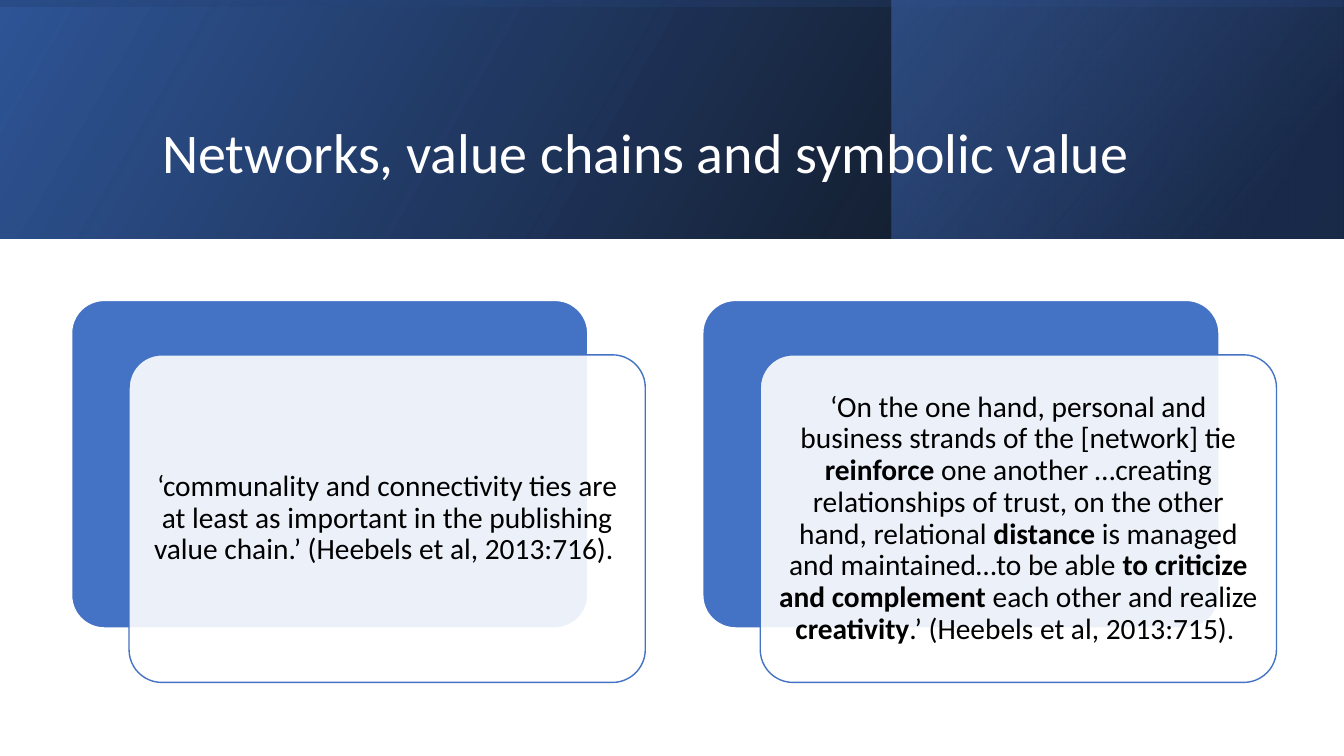
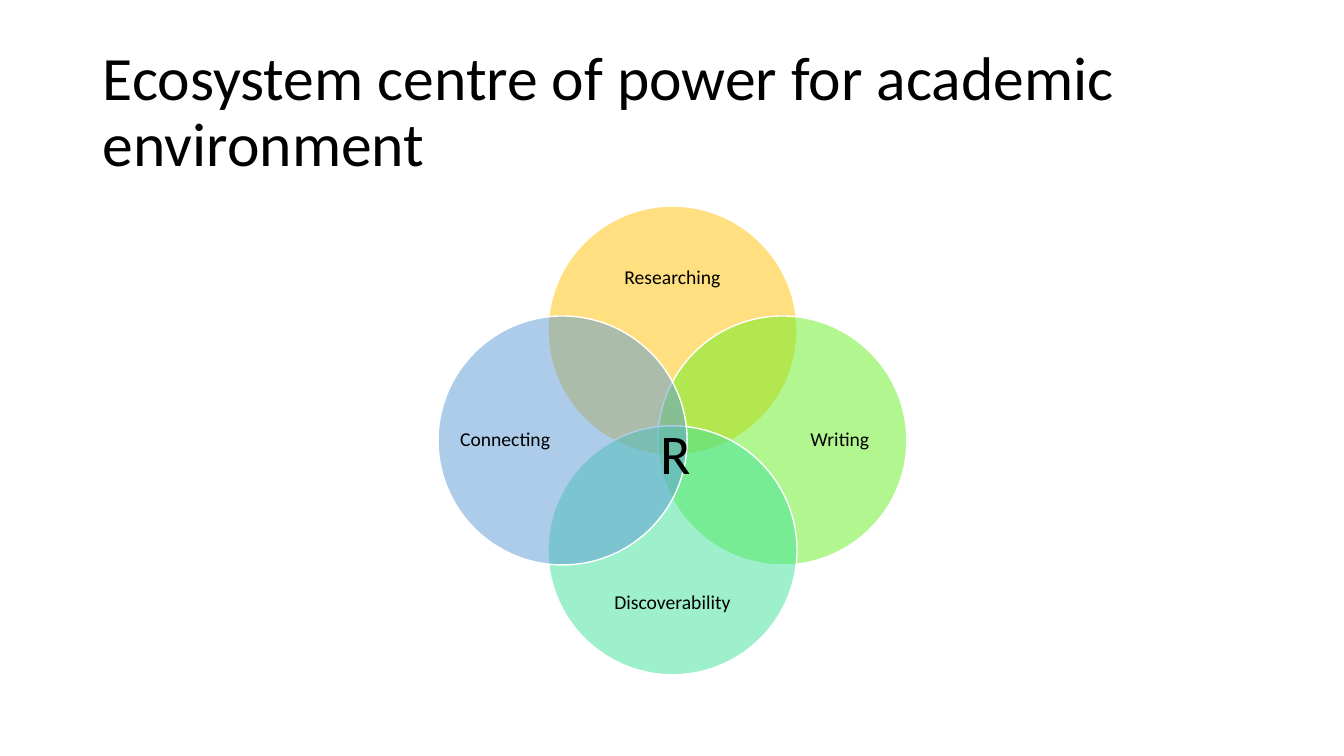
from lxml import etree
from pptx import Presentation
from pptx.dml.color import RGBColor
from pptx.enum.shapes import MSO_SHAPE
from pptx.enum.text import MSO_ANCHOR, PP_ALIGN
from pptx.oxml.ns import qn
from pptx.util import Inches, Pt

RECTANGLE, ROUNDED, OVAL = MSO_SHAPE.RECTANGLE, MSO_SHAPE.ROUNDED_RECTANGLE, MSO_SHAPE.OVAL
LEFT, CENTER, MIDDLE, TOP = PP_ALIGN.LEFT, PP_ALIGN.CENTER, MSO_ANCHOR.MIDDLE, MSO_ANCHOR.TOP

FONT = "Calibri"
BLACK = RGBColor(0x00, 0x00, 0x00)
WHITE = RGBColor(0xFF, 0xFF, 0xFF)
BLUE = RGBColor(0x44, 0x72, 0xC4)
DEEP_BLUE = RGBColor(0x2F, 0x55, 0x97)
NAVY = RGBColor(0x20, 0x38, 0x64)
GOLD = RGBColor(0xFF, 0xC0, 0x00)
LIME = RGBColor(0x67, 0xEF, 0x21)
MINT = RGBColor(0x3F, 0xE1, 0x9B)
SKY = RGBColor(0x5B, 0x9B, 0xD5)

SLIDE_WIDTH, SLIDE_HEIGHT = 13.33, 7.5
BAND_HEIGHT = 2.37

# box, rotation, gradient angle, stops (position %, colour, opacity %)
BANDS = [
    ((0, 0, SLIDE_WIDTH, BAND_HEIGHT), 0, 330, [(0, BLACK, 96), (100, DEEP_BLUE, 100)]),
    ((8.84, 0, 4.48, BAND_HEIGHT), 0, 320, [(19, NAVY, 68), (100, BLUE, 48)]),
    ((5.48, -5.48, BAND_HEIGHT, SLIDE_WIDTH), 270, 350, [(23, DEEP_BLUE, 16), (99, BLACK, 45)]),
]

# runs of each quotation: text, bold
QUOTES = [
    [("‘communality and connectivity ties are at least as important in the "
      "publishing value chain.’ (Heebels et al, 2013:716). ", False)],
    [("‘On the one hand, personal and business strands of the [network] tie ", False),
     ("reinforce ", True),
     ("one another …creating relationships of trust, on the other hand, relational ", False),
     ("distance", True),
     (" is managed and maintained…to be able ", False),
     ("to criticize and complement ", True),
     ("each other and realize ", False),
     ("creativity", True),
     (".’ (Heebels et al, 2013:715). ", False)],
]
CARD_LEFT, CARD_TOP, CARD_PITCH = 0.71, 2.98, 6.26
CARD_WIDTH, CARD_HEIGHT = 5.12, 3.25
CARD_SHIFT_X, CARD_SHIFT_Y = 0.57, 0.54

# label, colour, direction from the centre
CIRCLES = [
    ("Researching", GOLD, 0, -1),
    ("Writing", LIME, 1, 0),
    ("Discoverability", MINT, 0, 1),
    ("Connecting", SKY, -1, 0),
]
VENN_X, VENN_Y = 6.67, 4.37
DIAMETER, CIRCLE_REACH = 2.47, 1.09
LABEL_REACH_X, LABEL_REACH_Y = 1.66, 1.61


def set_attributes(target, values):
    for name, value in values.items():
        setattr(target, name, value)


def set_box(shape, box):
    values = map(Inches, box)
    set_attributes(shape, dict(zip(("left", "top", "width", "height"), values)))


def add_opacity(color_element, opacity):
    if opacity < 100:
        etree.SubElement(color_element, qn("a:alpha")).set("val", str(opacity * 1000))


def write_text(shape, runs, size, color=BLACK, align=CENTER, anchor=MIDDLE,
               margins=(0, 0, 0, 0), line_spacing=0.9):
    """Fill the shape with one paragraph; margins are left, top, right, bottom."""
    frame = shape.text_frame
    names = ("margin_left", "margin_top", "margin_right", "margin_bottom")
    set_attributes(frame, dict(zip(names, map(Inches, margins))))
    set_attributes(frame, {"word_wrap": True, "vertical_anchor": anchor})
    paragraph = frame.paragraphs[0]
    set_attributes(paragraph, {"alignment": align, "line_spacing": line_spacing})
    for text, bold in runs:
        run = paragraph.add_run()
        run.text = text
        set_attributes(run.font, {"name": FONT, "size": Pt(size), "bold": bold})
        run.font.color.rgb = color


def add_label(slide, text, box, size, **text_format):
    label = slide.shapes.add_textbox(*map(Inches, box))
    write_text(label, [(text, False)], size, **text_format)


def add_solid(slide, kind, box, fill, line, opacity=100):
    shape = slide.shapes.add_shape(kind, *map(Inches, box))
    shape.shadow.inherit = False
    shape.fill.solid()
    shape.fill.fore_color.rgb = fill
    add_opacity(shape.element.spPr.find(f".//{qn('a:srgbClr')}"), opacity)
    shape.line.color.rgb = line
    shape.line.width = Pt(1)
    return shape


def add_band(slide, box, rotation, angle, stops):
    """Add a mirrored rectangle with a linear gradient, angle clockwise."""
    band = slide.shapes.add_shape(RECTANGLE, *map(Inches, box))
    band.shadow.inherit = False
    band.rotation = rotation
    band.line.fill.background()
    properties = band.element.spPr
    properties.find(qn("a:xfrm")).set("flipH", "1")
    gradient = etree.Element(qn("a:gradFill"), rotWithShape="1")
    stop_list = etree.SubElement(gradient, qn("a:gsLst"))
    for position, color, opacity in stops:
        stop = etree.SubElement(stop_list, qn("a:gs"), pos=str(position * 1000))
        add_opacity(etree.SubElement(stop, qn("a:srgbClr"), val=str(color)), opacity)
    etree.SubElement(gradient, qn("a:lin"), ang=str(angle * 60000), scaled="0")
    properties.find(qn("a:prstGeom")).addnext(gradient)


def add_title(slide, text, box, size, color=BLACK, margin_top=0.05):
    title = slide.shapes.title
    set_box(title, box)
    write_text(title, [(text, False)], size, color, LEFT,
               margins=(0.1, margin_top, 0.1, 0.05))
    title.element.getparent().append(title.element)


def add_quote_card(slide, left, runs):
    size = (CARD_WIDTH, CARD_HEIGHT)
    back = add_solid(slide, ROUNDED, (left, CARD_TOP, *size), BLUE, WHITE)
    front_box = (left + CARD_SHIFT_X, CARD_TOP + CARD_SHIFT_Y, *size)
    front = add_solid(slide, ROUNDED, front_box, WHITE, BLUE, opacity=90)
    for card in (back, front):
        card.adjustments[0] = 0.1
    write_text(front, runs, 21, margins=(0.09,) * 4)


def centred_box(x, y, width, height):
    return x - width / 2, y - height / 2, width, height


def add_venn_circle(slide, text, color, step_x, step_y):
    circle_box = centred_box(VENN_X + step_x * CIRCLE_REACH,
                             VENN_Y + step_y * CIRCLE_REACH, DIAMETER, DIAMETER)
    add_solid(slide, OVAL, circle_box, color, WHITE, opacity=50)
    label_size = (0.95, 1.9) if step_x else (1.9, 0.79)
    label_box = centred_box(VENN_X + step_x * LABEL_REACH_X,
                            VENN_Y + step_y * LABEL_REACH_Y, *label_size)
    add_label(slide, text, label_box, 14)


def build_networks_slide(slide):
    for band in BANDS:
        add_band(slide, *band)
    add_title(slide, "Networks, value chains and symbolic value",
              (1.51, 0.38, 10.63, 1.72), 40, WHITE, margin_top=0.66)
    for index, runs in enumerate(QUOTES):
        add_quote_card(slide, CARD_LEFT + index * CARD_PITCH, runs)


def build_ecosystem_slide(slide):
    add_title(slide, "Ecosystem centre of power for academic environment",
              (0.92, 0.4, 11.5, 1.45), 44)
    for circle in CIRCLES:
        add_venn_circle(slide, *circle)
    add_label(slide, "R", (6.45, 4.1, 0.54, 0.77), 40, align=LEFT, anchor=TOP,
              margins=(0.1, 0.05, 0.1, 0.05), line_spacing=1.0)


def main():
    presentation = Presentation()
    presentation.slide_width = Inches(SLIDE_WIDTH)
    presentation.slide_height = Inches(SLIDE_HEIGHT)
    title_only = presentation.slide_layouts[5]
    for build in (build_networks_slide, build_ecosystem_slide):
        build(presentation.slides.add_slide(title_only))
    presentation.save("out.pptx")


if __name__ == "__main__":
    main()
